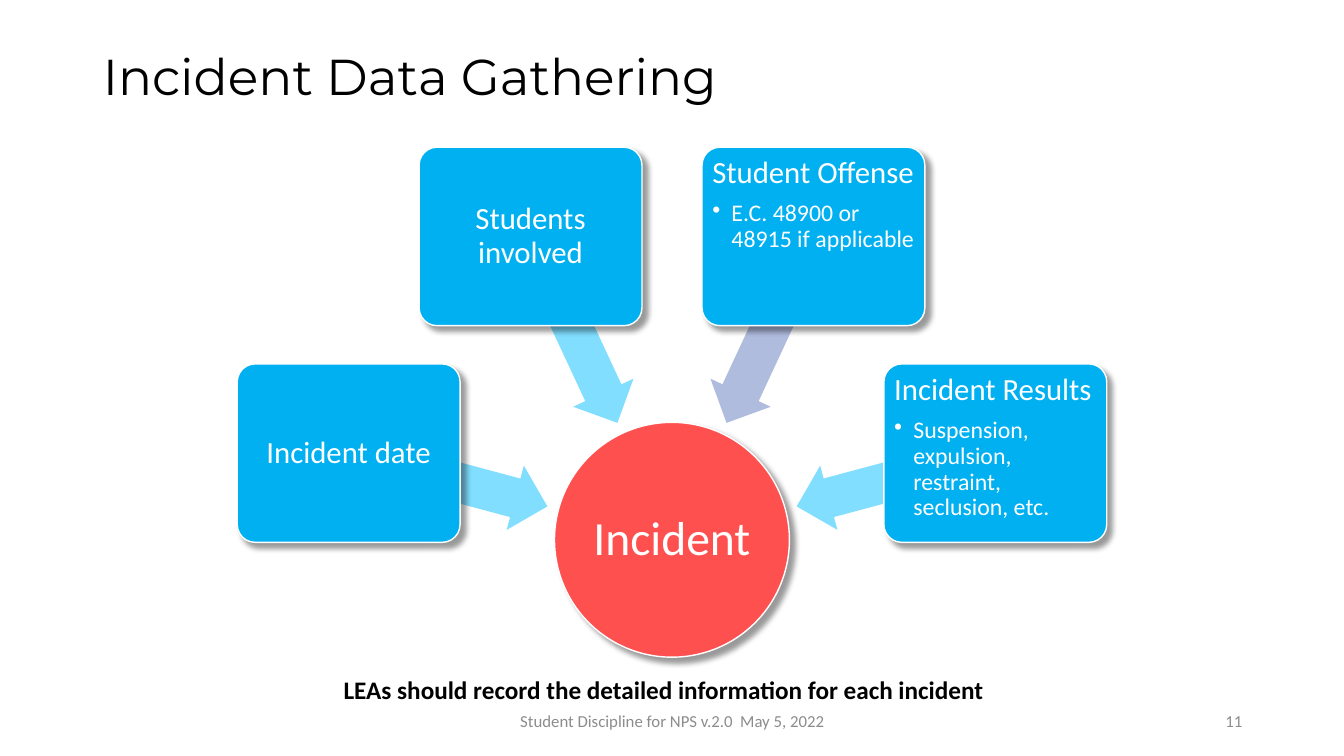
import math

import pptx
import pptx.dml.color
import pptx.enum.shapes
import pptx.enum.text
import pptx.oxml
import pptx.oxml.ns
import pptx.util

SHAPE = pptx.enum.shapes.MSO_SHAPE
ALIGN = pptx.enum.text.PP_ALIGN
ANCHOR = pptx.enum.text.MSO_ANCHOR
PX_PER_INCH = 100
SLIDE_SIZE = (1333, 750)
WHITE, BLACK, GREY = "FFFFFF", "000000", "8C8C8C"
RED, BLUE, LIGHT_BLUE, LAVENDER = "FF5050", "00B0F0", "81DEFF", "B0BCDE"

# angle around the hub, heading, bullet, arrow colour
INCIDENT_FACTS = [
    (195, "Incident date", None, LIGHT_BLUE),
    (245, "Students involved", None, LIGHT_BLUE),
    (295, "Student Offense", "E.C. 48900 or 48915 if applicable", LAVENDER),
    (345, "Incident Results", "Suspension, expulsion, restraint, seclusion, etc.",
     LIGHT_BLUE),
]


def px(length):
    return round(length * 914400 / PX_PER_INCH)


def rgb(hex_colour):
    return pptx.dml.color.RGBColor.from_string(hex_colour)


def apply(target, values):
    for name, value in values.items():
        setattr(target, name, value)


def set_frame(frame, anchor, inset=None):
    apply(frame, {"word_wrap": True, "vertical_anchor": anchor,
                  "auto_size": pptx.enum.text.MSO_AUTO_SIZE.NONE})
    if inset is not None:
        apply(frame, {f"margin_{side}": px(inset)
                      for side in ("left", "top", "right", "bottom")})


def write(paragraph, text, size, colour, align=ALIGN.LEFT, font="Calibri",
          bold=False, line_spacing=0.9, space_after=0):
    apply(paragraph, {"alignment": align, "line_spacing": line_spacing,
                      "space_after": pptx.util.Pt(space_after),
                      "space_before": pptx.util.Pt(0)})
    run = paragraph.add_run()
    run.text = text
    apply(run.font, {"name": font, "size": pptx.util.Pt(size), "bold": bold})
    run.font.color.rgb = rgb(colour)


def add_bullet(paragraph, indent):
    properties = paragraph._p.get_or_add_pPr()
    properties.set("marL", str(px(indent)))
    properties.set("indent", str(-px(indent)))
    bullet = pptx.oxml.parse_xml(
        f'<a:buChar {pptx.oxml.ns.nsdecls("a")} char="•"/>')
    properties.append(bullet)


def add_filled(slide, kind, centre, size, colour):
    (x, y), (width, height) = centre, size
    shape = slide.shapes.add_shape(kind, px(x - width / 2), px(y - height / 2),
                                   px(width), px(height))
    shape.shadow.inherit = False
    shape.fill.solid()
    shape.fill.fore_color.rgb = rgb(colour)
    shape.line.fill.background()
    return shape


def raise_card(shape):
    """Give a shape a white outline and a soft shadow to its lower right."""
    shape.line.color.rgb = rgb(WHITE)
    shape.line.width = pptx.util.Pt(1)
    shadow = pptx.oxml.parse_xml(
        f'<a:outerShdw {pptx.oxml.ns.nsdecls("a")} blurRad="50800" dist="63500" '
        'dir="2700000" algn="tl" rotWithShape="0"><a:srgbClr val="000000">'
        '<a:alpha val="40000"/></a:srgbClr></a:outerShdw>')
    shape._element.spPr.find(pptx.oxml.ns.qn("a:effectLst")).append(shadow)


def add_fact_card(slide, centre, heading, detail):
    card = add_filled(slide, SHAPE.ROUNDED_RECTANGLE, centre, (221, 177), BLUE)
    card.adjustments[0] = 0.1
    raise_card(card)
    frame = card.text_frame
    set_frame(frame, ANCHOR.TOP if detail else ANCHOR.MIDDLE, 5)
    write(frame.paragraphs[0], heading, 22, WHITE,
          ALIGN.LEFT if detail else ALIGN.CENTER, space_after=7.7)
    if detail:
        bullet = frame.add_paragraph()
        write(bullet, detail, 17, WHITE)
        add_bullet(bullet, 19)


def add_incident_diagram(slide, box):
    """Place the hub in the box, with facts on a ring around it."""
    left, top, width, height = box
    hub_centre = (left + width / 2, top + height / 2)

    def on_ring(radius, angle):
        turn = math.radians(angle)
        return (hub_centre[0] + radius * math.cos(turn),
                hub_centre[1] + radius * math.sin(turn))

    hub = add_filled(slide, SHAPE.OVAL, hub_centre, (width, height), RED)
    raise_card(hub)
    set_frame(hub.text_frame, ANCHOR.MIDDLE, 2)
    write(hub.text_frame.paragraphs[0], "Incident", 34, WHITE, ALIGN.CENTER)

    for angle, heading, detail, arrow_colour in INCIDENT_FACTS:
        arrow = add_filled(slide, SHAPE.LEFT_ARROW, on_ring(230, angle),
                           (204, 66), arrow_colour)
        arrow.rotation = angle
        arrow.adjustments[0] = 0.6
        arrow.adjustments[1] = 0.5
        add_fact_card(slide, on_ring(332, angle), heading, detail)


def add_title(slide, box):
    title = slide.shapes.title
    apply(title, dict(zip(("left", "top", "width", "height"), map(px, box))))
    set_frame(title.text_frame, ANCHOR.MIDDLE)
    write(title.text_frame.paragraphs[0], "Incident Data Gathering", 36, BLACK,
          font="Montserrat")


def add_label(slide, box, text, size, colour, anchor=ANCHOR.MIDDLE, **style):
    label = slide.shapes.add_textbox(*map(px, box))
    set_frame(label.text_frame, anchor)
    write(label.text_frame.paragraphs[0], text, size, colour,
          line_spacing=1.0, **style)


def main():
    deck = pptx.Presentation()
    deck.slide_width, deck.slide_height = map(px, SLIDE_SIZE)
    slide = deck.slides.add_slide(deck.slide_layouts.get_by_name("Title Only"))
    add_title(slide, (92, 46, 1150, 66))
    add_incident_diagram(slide, (550, 419, 233, 233))
    add_label(slide, (331, 664, 784, 40),
              "LEAs should record the detailed information for each incident",
              18, BLACK, ANCHOR.TOP, bold=True)
    add_label(slide, (442, 695, 450, 40),
              "Student Discipline for NPS v.2.0  May 5, 2022", 12, GREY,
              align=ALIGN.CENTER)
    add_label(slide, (942, 695, 300, 40), "11", 12, GREY, align=ALIGN.RIGHT)
    deck.save("out.pptx")


if __name__ == "__main__":
    main()
